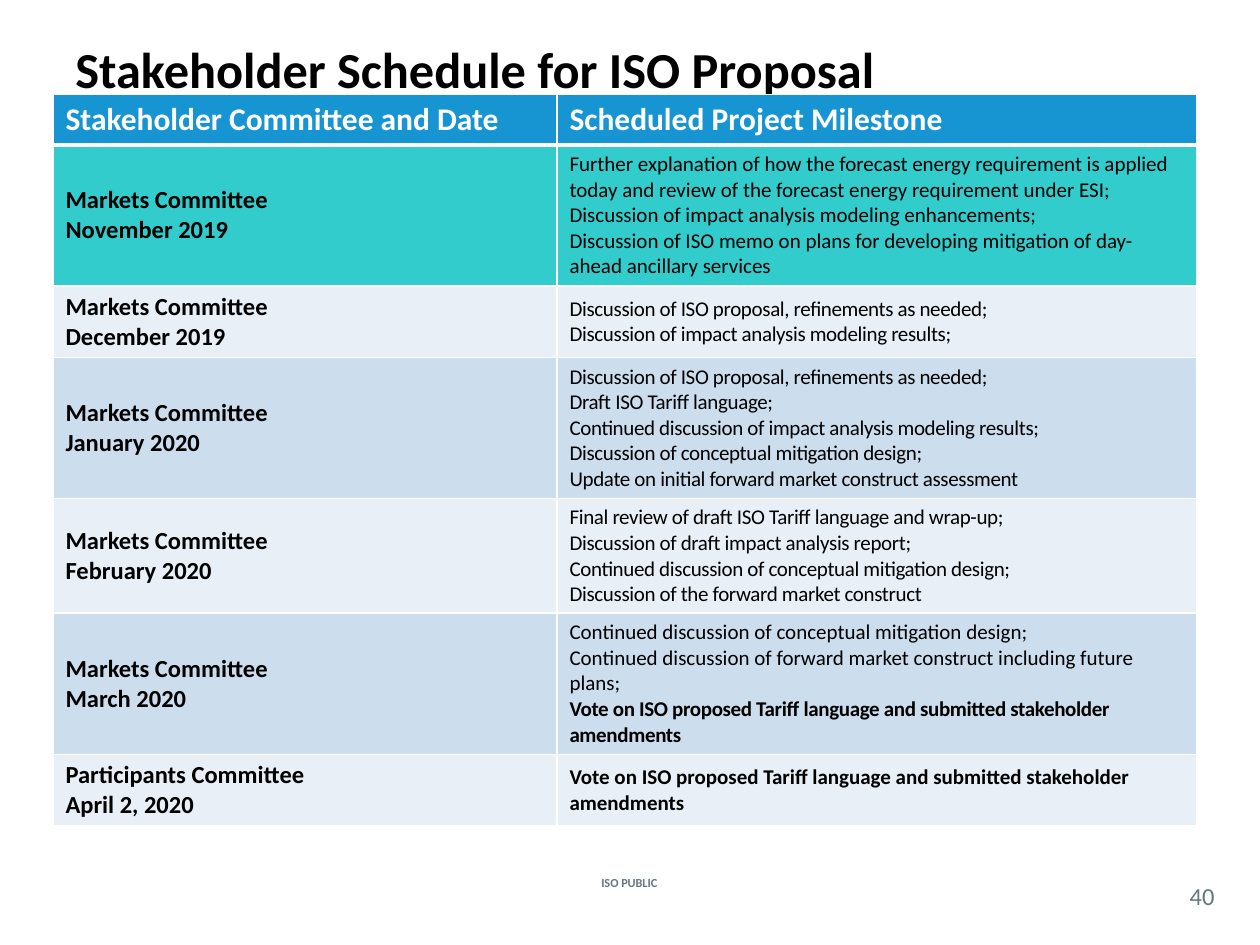
from lxml.etree import SubElement
from pptx import Presentation
from pptx.dml.color import RGBColor
from pptx.enum.text import MSO_ANCHOR, PP_ALIGN
from pptx.oxml.ns import qn
from pptx.util import Inches, Pt

COLORS = {
    "black": "000000", "white": "FFFFFF", "gray": "62777F", "header": "1795D2",
    "current": "33CCCC", "light": "E8EFF7", "medium": "CCDDEE",
}
TIGHT = -20  # character spacing in hundredths of a point


def add_run(paragraph, text, size, color, bold=False, spacing=0):
    run = paragraph.add_run()
    run.text = text
    run.font.name = "Calibri"
    run.font.size = Pt(size)
    run.font.bold = bold
    run.font.color.rgb = RGBColor.from_string(COLORS[color])
    if spacing:
        run._r.get_or_add_rPr().set("spc", str(spacing))


def style_cell(cell, fill, bottom_width=1):
    cell.vertical_anchor = MSO_ANCHOR.MIDDLE
    cell.margin_left = cell.margin_right = Inches(0.1)
    cell.margin_top = cell.margin_bottom = Inches(0.05)
    properties = cell._tc.get_or_add_tcPr()
    for side, width in (("L", 1), ("R", 1), ("T", 1), ("B", bottom_width)):
        line = SubElement(properties, qn(f"a:ln{side}"), w=str(Pt(width)))
        line_fill = SubElement(line, qn("a:solidFill"))
        SubElement(line_fill, qn("a:srgbClr"), val=COLORS["white"])
    cell.fill.solid()
    cell.fill.fore_color.rgb = RGBColor.from_string(COLORS[fill])


presentation = Presentation()
presentation.slide_width = Inches(10)
presentation.slide_height = Inches(7.5)
slide = presentation.slides.add_slide(presentation.slide_layouts[6])

# Title, footer and page number: box, margins, alignment, text style
texts = [
    ((0.5, 0.25, 9, 0.58), (0.1, 0.05), PP_ALIGN.LEFT,
     ("Stakeholder Schedule for ISO Proposal", 28.8, "black", True)),
    ((4.26, 6.87, 1.47, 0.27), (0.1, 0.05), PP_ALIGN.CENTER,
     ("ISO PUBLIC", 7, "gray", True)),
    ((9.33, 6.96, 0.42, 0.29), (0, 0), PP_ALIGN.CENTER,
     ("40", 14, "gray", False)),
]
for box, (side_margin, end_margin), alignment, run_style in texts:
    shape = slide.shapes.add_textbox(*(Inches(length) for length in box))
    frame = shape.text_frame
    frame.word_wrap = True
    frame.vertical_anchor = MSO_ANCHOR.MIDDLE
    frame.margin_left = frame.margin_right = Inches(side_margin)
    frame.margin_top = frame.margin_bottom = Inches(end_margin)
    frame.paragraphs[0].alignment = alignment
    add_run(frame.paragraphs[0], *run_style)

# Schedule: height, fill, committee, date, milestones (text, bold, spacing)
vote = "Vote on ISO proposed Tariff language and submitted stakeholder amendments"
schedule = [
    (1.12, "current", "Markets Committee", "November 2019", [
        ("Further explanation of how the forecast energy requirement is applied "
         "today and review of the forecast energy requirement under ESI;", False, 0),
        ("Discussion of impact analysis modeling enhancements;", False, 0),
        ("Discussion of ISO memo on plans for developing mitigation of "
         "day-ahead ancillary services", False, 0),
    ]),
    (0.56, "light", "Markets Committee", "December 2019", [
        ("Discussion of ISO proposal, refinements as needed;", False, TIGHT),
        ("Discussion of impact analysis modeling results;", False, TIGHT),
    ]),
    (1.12, "medium", "Markets Committee", "January 2020", [
        ("Discussion of ISO proposal, refinements as needed;", False, TIGHT),
        ("Draft ISO Tariff language;", False, TIGHT),
        ("Continued discussion of impact analysis modeling results;", False, TIGHT),
        ("Discussion of conceptual mitigation design;", False, TIGHT),
        ("Update on initial forward market construct assessment", False, TIGHT),
    ]),
    (0.91, "light", "Markets Committee", "February 2020", [
        ("Final review of draft ISO Tariff language and wrap-up;", False, TIGHT),
        ("Discussion of draft impact analysis report;", False, TIGHT),
        ("Continued discussion of conceptual mitigation design;", False, TIGHT),
        ("Discussion of the forward market construct", False, TIGHT),
    ]),
    (1.12, "medium", "Markets Committee", "March 2020", [
        ("Continued discussion of conceptual mitigation design;", False, 0),
        ("Continued discussion of forward market construct including future plans;",
         False, 0),
        (vote, True, TIGHT),
    ]),
    (0.56, "light", "Participants Committee", "April 2, 2020", [(vote, True, 0)]),
]

table = slide.shapes.add_table(
    len(schedule) + 1, 2, Inches(0.42), Inches(0.75), Inches(9.08), Inches(5.78)
).table
for column, width in zip(table.columns, (4, 5.08)):
    column.width = Inches(width)

# Header row
table.rows[0].height = Inches(0.39)
headings = ("Stakeholder Committee and Date", "Scheduled Project Milestone")
for cell, heading in zip(table.rows[0].cells, headings):
    style_cell(cell, "header", bottom_width=3)
    add_run(cell.text_frame.paragraphs[0], heading, 18, "white", True)

# Schedule rows
for row_index, (height, fill, committee, date, milestones) in enumerate(schedule, 1):
    row = table.rows[row_index]
    row.height = Inches(height)
    meeting = [(committee, True, 0), (date, True, 0)]
    for cell, lines, size in zip(row.cells, (meeting, milestones), (14, 12)):
        style_cell(cell, fill)
        frame = cell.text_frame
        for index, (text, bold, spacing) in enumerate(lines):
            paragraph = frame.add_paragraph() if index else frame.paragraphs[0]
            add_run(paragraph, text, size, "black", bold, spacing)

presentation.save("out.pptx")
